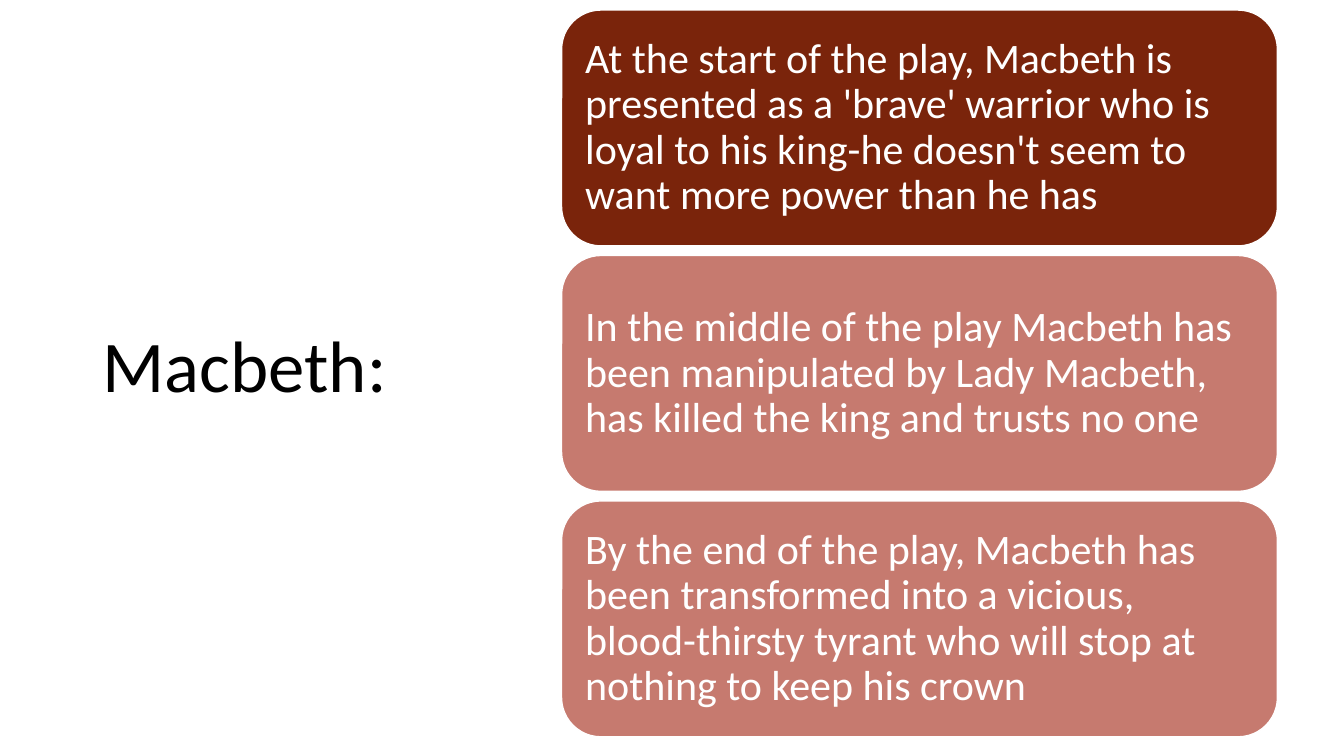
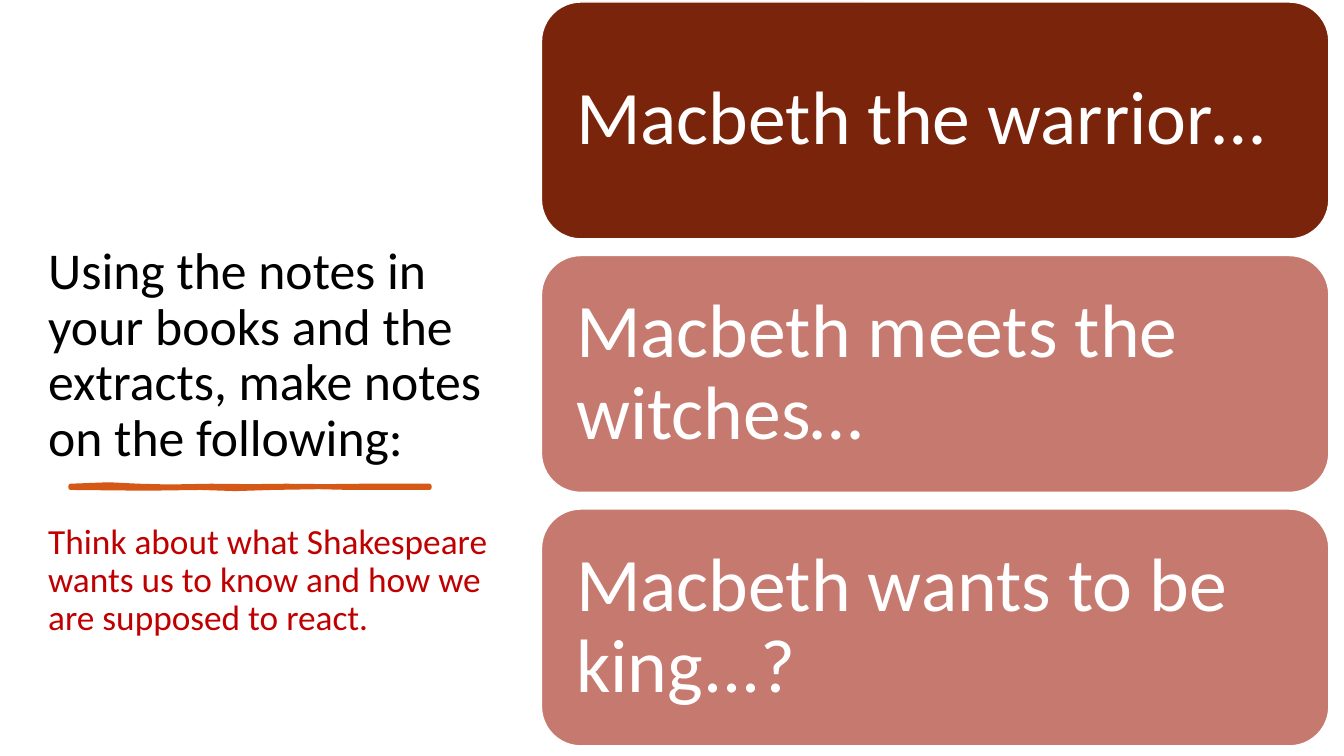
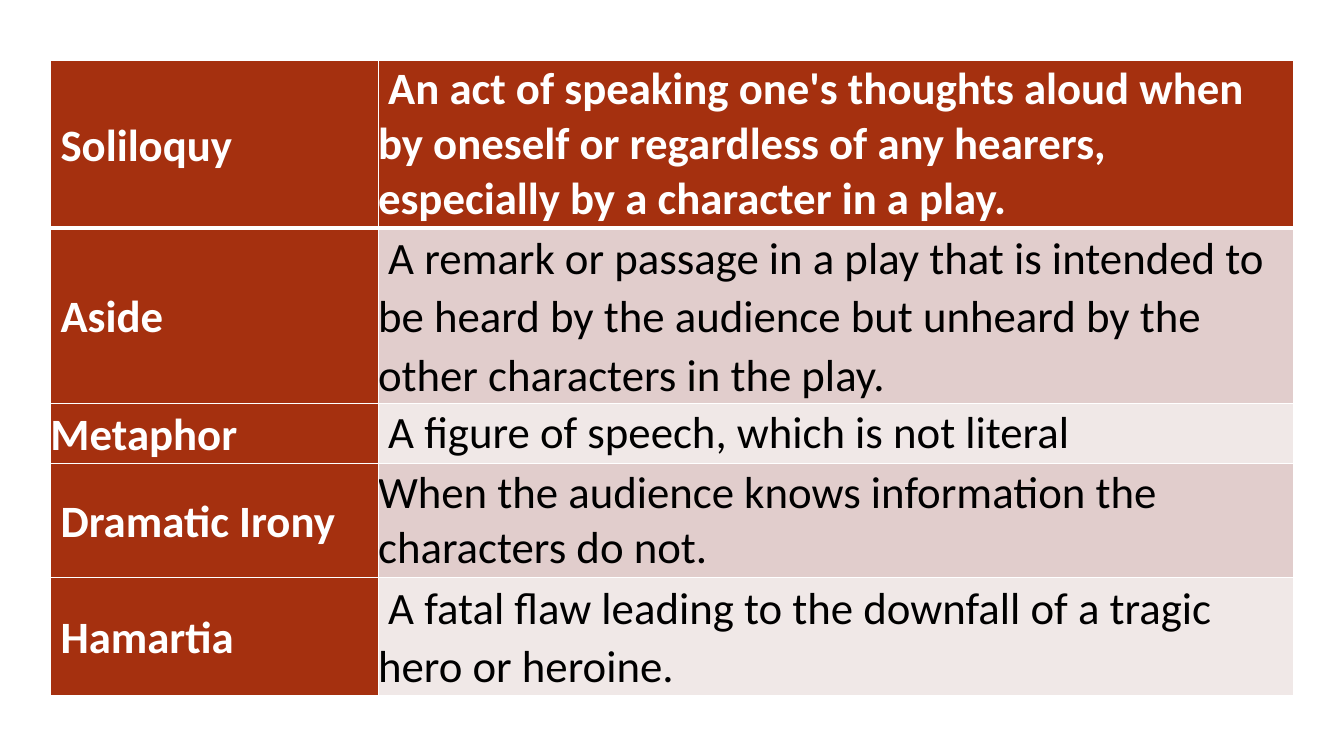
"""Build three slides on Macbeth: his decline, a note task and key terms."""
import pptx
import pptx.util
import pptx.dml.color
import pptx.enum.shapes
import pptx.enum.text
import pptx.oxml

Inches, Pt = pptx.util.Inches, pptx.util.Pt
RGBColor = pptx.dml.color.RGBColor
ANCHOR = pptx.enum.text.MSO_ANCHOR
ROUND = pptx.enum.shapes.MSO_SHAPE.ROUNDED_RECTANGLE

FONT = "Calibri"
WHITE = RGBColor(0xFF, 0xFF, 0xFF)
BLACK = RGBColor(0, 0, 0)
RED = RGBColor(0xC0, 0, 0)
DARK = RGBColor(0x7A, 0x24, 0x0B)
ROSE = RGBColor(0xC6, 0x7A, 0x6F)
RUST = RGBColor(0xA5, 0x30, 0x0F)
ORANGE = RGBColor(0xD5, 0x58, 0x16)
BANDS = [RGBColor(0xF0, 0xE8, 0xE7), RGBColor(0xE1, 0xCD, 0xCC)]

STAGES = [
    "At the start of the play, Macbeth is presented as a 'brave' warrior who is "
    "loyal to his king-he doesn't seem to want more power than he has",
    "In the middle of the play Macbeth has been manipulated by Lady Macbeth, "
    "has killed the king and trusts no one",
    "By the end of the play, Macbeth has been transformed into a vicious, "
    "blood-thirsty tyrant who will stop at nothing to keep his crown",
]
TOPICS = ["Macbeth the warrior…", "Macbeth meets the witches…", "Macbeth wants to be king...?"]
TASK = [
    ("Using the notes in your books and the extracts, make notes on the following:", 36.9, BLACK, 0),
    ("Think about what Shakespeare wants us to know and how we are supposed to react.", 25.2, RED, 40),
]
TERMS = [
    (" Soliloquy", " An act of speaking one's thoughts aloud when by oneself or regardless "
     "of any hearers, especially by a character in a play.", 1.66, 1),
    (" Aside", " A remark or passage in a play that is intended to be heard by the audience "
     "but unheard by the other characters in the play.", 1.74, 1.07),
    ("Metaphor", " A figure of speech, which is not literal", 0.6, 1),
    (" Dramatic Irony", "When the audience knows information the characters do not.", 1.13, 1),
    (" Hamartia", " A fatal flaw leading to the downfall of a tragic hero or heroine.", 1.17, 1.07),
]
START = (0.7, 4.82)
EDGE = [
    (0.97, 4.8, 1.21, 4.8, 1.38, 4.82), (1.55, 4.84, 1.77, 4.82, 2.09, 4.82),
    (2.41, 4.82, 2.6, 4.83, 2.84, 4.82), (3.08, 4.81, 3.39, 4.84, 3.59, 4.82),
    (3.79, 4.81, 4.12, 4.83, 4.26, 4.82), (4.26, 4.83, 4.26, 4.84, 4.26, 4.84),
    (4.08, 4.85, 3.64, 4.83, 3.48, 4.84), (3.32, 4.85, 3.04, 4.81, 2.7, 4.84),
    (2.35, 4.87, 2.31, 4.84, 1.99, 4.84), (1.66, 4.84, 1.32, 4.86, 0.7, 4.84),
]


def style(para, text, size, color, space=0.9, bold=False):
    para.text = text
    para.line_spacing = space
    para.alignment = pptx.enum.text.PP_ALIGN.LEFT
    font = para.font
    font.name, font.size, font.bold = FONT, Pt(size), bold
    font.color.rgb = color


def title(slide, box, parts, anchor):
    frame = slide.shapes.add_textbox(*map(Inches, box)).text_frame
    frame.word_wrap = True
    frame.vertical_anchor = anchor
    for num, (text, size, color, before) in enumerate(parts):
        para = frame.add_paragraph() if num else frame.paragraphs[0]
        style(para, text, size, color)
        para.space_before = Pt(before)


def cards(slide, texts, left, top, last, width, height, size, pad):
    step = (last - top) / (len(texts) - 1)
    for num, text in enumerate(texts):
        box = (left, top + num * step, width, height)
        card = slide.shapes.add_shape(ROUND, *map(Inches, box))
        card.shadow.inherit = False
        card.fill.solid()
        card.fill.fore_color.rgb = ROSE if num else DARK
        card.line.color.rgb = WHITE
        card.line.width = Pt(1)
        frame = card.text_frame
        frame.word_wrap = True
        frame.vertical_anchor = ANCHOR.MIDDLE
        frame.margin_left = frame.margin_right = Inches(pad)
        frame.margin_top = frame.margin_bottom = Inches(pad)
        style(frame.paragraphs[0], text, size, WHITE)


def trace(curves, steps=2):
    x, y = START
    dots = []
    for ax, ay, bx, by, cx, cy in curves:
        for num in range(1, steps + 1):
            t = num / steps
            u = 1 - t
            mix = (u ** 3, 3 * u * u * t, 3 * u * t * t, t ** 3)
            dots.append(tuple(Inches(sum(m * v for m, v in zip(mix, vals)))
                              for vals in ((x, ax, bx, cx), (y, ay, by, cy))))
        x, y = cx, cy
    return dots


def stroke(slide, curves):
    pen = slide.shapes.build_freeform(*map(Inches, START))
    pen.add_line_segments(trace(curves), close=True)
    mark = pen.convert_to_shape()
    mark.shadow.inherit = False
    mark.fill.solid()
    mark.fill.fore_color.rgb = ORANGE
    mark.line.color.rgb = ORANGE
    mark.line.width = Pt(3)


def border(cell, row):
    sides = {"L": 1, "R": 1, "T": 3 if row == 1 else 1, "B": 1 if row else 3}
    props = cell._tc.get_or_add_tcPr()
    for num, (side, width) in enumerate(sides.items()):
        props.insert(num, pptx.oxml.parse_xml(
            f'<a:ln{side} xmlns:a="http://schemas.openxmlformats.org/drawingml/2006/main" '
            f'w="{Pt(width)}"><a:solidFill><a:srgbClr val="{WHITE}"/></a:solidFill></a:ln{side}>'))


def glossary(slide):
    box = (0.5, 0.6, 12.33, 6.3)
    table = slide.shapes.add_table(len(TERMS), 2, *map(Inches, box)).table
    for col, width in zip(table.columns, (3.25, 9.08)):
        col.width = Inches(width)
    for row, (term, sense, height, space) in enumerate(TERMS):
        table.rows[row].height = Inches(height)
        for col, (text, lead) in enumerate(((term, 1.07), (sense, space))):
            cell = table.cell(row, col)
            head = row == 0 or col == 0
            cell.fill.solid()
            cell.fill.fore_color.rgb = RUST if head else BANDS[row % 2]
            cell.vertical_anchor = ANCHOR.MIDDLE
            cell.margin_left = cell.margin_right = 0
            cell.margin_top = cell.margin_bottom = 0
            style(cell.text_frame.paragraphs[0], text, 32, WHITE if head else BLACK, lead, head)
            border(cell, row)


def main():
    deck = pptx.Presentation()
    deck.slide_width, deck.slide_height = Inches(13.33), Inches(7.5)
    blank = deck.slide_layouts[6]
    story, task, terms = [deck.slides.add_slide(blank) for _ in range(3)]

    title(story, (0.92, 0.61, 3.69, 6.09), [("Macbeth:", 52, BLACK, 0)], ANCHOR.MIDDLE)
    cards(story, STAGES, 5.57, 0.1, 4.97, 7.1, 2.34, 30, 0.12)

    title(task, (0.38, 1.36, 4.6, 5.02), TASK, ANCHOR.BOTTOM)
    stroke(task, EDGE)
    cards(task, TOPICS, 5.37, 0.02, 5.05, 7.81, 2.35, 54, 0.23)

    glossary(terms)
    deck.save("out.pptx")


if __name__ == "__main__":
    main()
